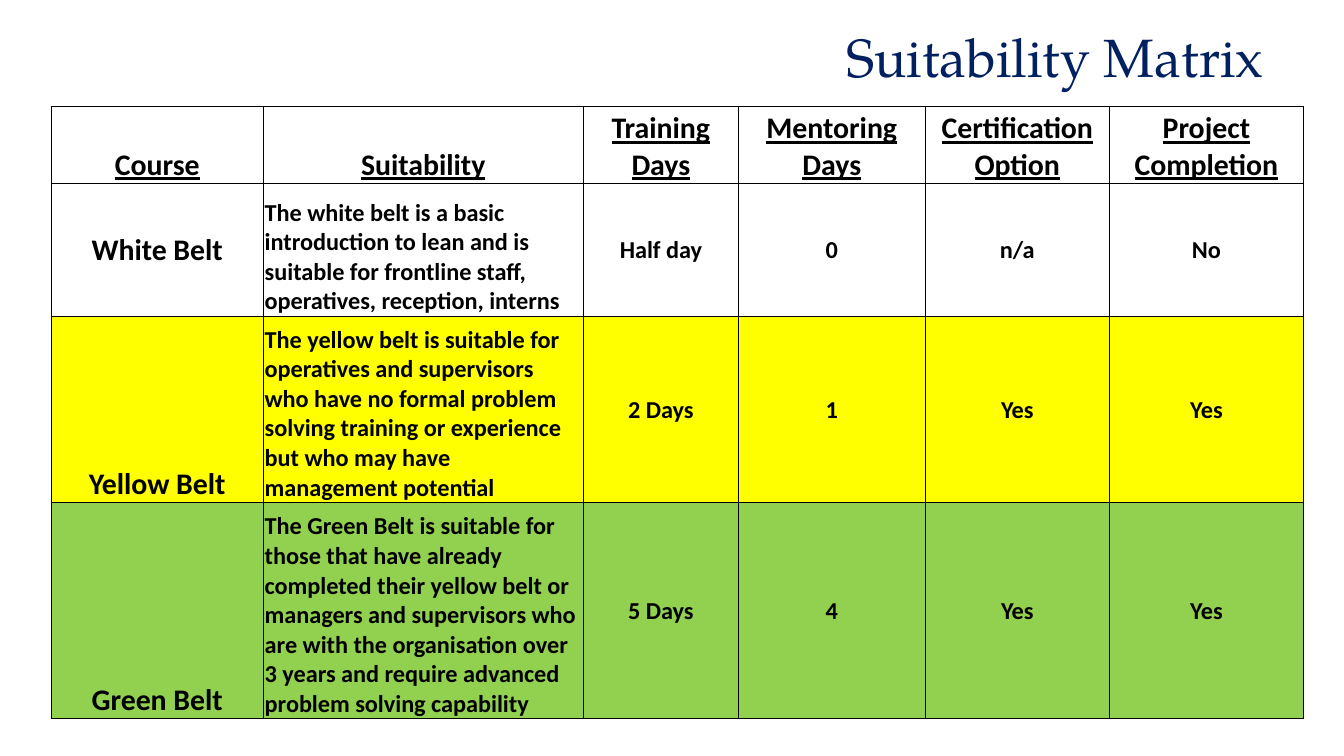
from dataclasses import dataclass

import pptx
import pptx.dml.color
import pptx.enum.text
import pptx.oxml
import pptx.oxml.ns
import pptx.table
import pptx.util

PX = 4572  # EMU, 200 px to the inch
BLACK = pptx.dml.color.RGBColor(0x00, 0x00, 0x00)
NAVY = pptx.dml.color.RGBColor(0x00, 0x20, 0x60)
YELLOW = pptx.dml.color.RGBColor(0xFF, 0xFF, 0x00)
GREEN = pptx.dml.color.RGBColor(0x92, 0xD0, 0x50)
ALIGN = pptx.enum.text.PP_ALIGN
ANCHOR = pptx.enum.text.MSO_ANCHOR

COLUMN_WIDTHS = (316, 476, 231, 278, 274, 289)
HEADINGS = ("Course", "Suitability", "Training Days", "Mentoring Days",
            "Certification Option", "Project Completion")
HEADER_HEIGHT = 115
HEADING_SIZE, BODY_SIZE = 16, 13
BORDER_WIDTH = pptx.util.Pt(0.5)
CELL_MARGIN = 2


@dataclass(frozen=True)
class Belt:
    name: str
    suitability: str
    facts: tuple[str, ...]
    height: int
    fill: pptx.dml.color.RGBColor | None = None
    name_anchor: ANCHOR = ANCHOR.BOTTOM


BELTS = (
    Belt("White Belt",
         "The white belt is a basic introduction to lean and is suitable for "
         "frontline staff, operatives, reception, interns",
         ("Half day", "0", "n/a", "No"), 198, name_anchor=ANCHOR.MIDDLE),
    Belt("Yellow Belt",
         "The yellow belt is suitable for operatives and supervisors who have no "
         "formal problem solving training or experience but who may have "
         "management potential",
         ("2 Days", "1", "Yes", "Yes"), 277, YELLOW),
    Belt("Green Belt",
         "The Green Belt is suitable for those that have already completed their "
         "yellow belt or managers and supervisors who are with the organisation "
         "over 3 years and require advanced problem solving capability",
         ("5 Days", "4", "Yes", "Yes"), 322, GREEN),
)


def set_all(target: object, **values: object) -> None:
    for name, value in values.items():
        setattr(target, name, value)


def write(para, text: str, align: ALIGN, size: float, face: str,
          color: pptx.dml.color.RGBColor, **style: object) -> None:
    para.alignment = align
    span = para.add_run()
    span.text = text
    set_all(span.font, size=pptx.util.Pt(size), name=face, **style)
    span.font.color.rgb = color


def add_borders(cell: pptx.table._Cell) -> None:
    properties = cell._tc.get_or_add_tcPr()
    for side in ("lnL", "lnR", "lnT", "lnB"):
        properties.append(pptx.oxml.parse_xml(
            f'<a:{side} {pptx.oxml.ns.nsdecls("a")} w="{BORDER_WIDTH}">'
            f'<a:solidFill><a:srgbClr val="{BLACK}"/></a:solidFill></a:{side}>'))


def fill_cell(cell: pptx.table._Cell, text: str, size: int, anchor: ANCHOR,
              align: ALIGN = ALIGN.CENTER, underline: bool = False,
              fill: pptx.dml.color.RGBColor | None = None) -> None:
    margin = CELL_MARGIN * PX
    set_all(cell, vertical_anchor=anchor, margin_left=margin, margin_right=margin,
            margin_top=margin, margin_bottom=0)
    add_borders(cell)
    if fill is None:
        cell.fill.background()
    else:
        cell.fill.solid()
        cell.fill.fore_color.rgb = fill
    write(cell.text_frame.paragraphs[0], text, align, size, "Calibri", BLACK,
          bold=True, underline=underline)


def add_title(page, text: str) -> None:
    box = page.shapes.add_textbox(100 * PX, 36 * PX, 1800 * PX, 188 * PX)
    set_all(box.text_frame, word_wrap=True, vertical_anchor=ANCHOR.TOP, margin_top=0)
    write(box.text_frame.paragraphs[0], text, ALIGN.RIGHT, 28.8,
          "TeX Gyre Pagella", NAVY)


def add_matrix(page) -> None:
    heights = (HEADER_HEIGHT, *(belt.height for belt in BELTS))
    table = page.shapes.add_table(
        len(heights), len(COLUMN_WIDTHS), 76 * PX, 158 * PX,
        sum(COLUMN_WIDTHS) * PX, sum(heights) * PX).table
    set_all(table, first_row=False, horz_banding=False)
    for column, width in zip(table.columns, COLUMN_WIDTHS):
        column.width = width * PX
    for row, height in zip(table.rows, heights):
        row.height = height * PX

    for column, heading in enumerate(HEADINGS):
        fill_cell(table.cell(0, column), heading, HEADING_SIZE, ANCHOR.BOTTOM,
                  underline=True)
    for row, belt in enumerate(BELTS, start=1):
        fill_cell(table.cell(row, 0), belt.name, HEADING_SIZE, belt.name_anchor,
                  fill=belt.fill)
        fill_cell(table.cell(row, 1), belt.suitability, BODY_SIZE, ANCHOR.BOTTOM,
                  ALIGN.LEFT, fill=belt.fill)
        for column, fact in enumerate(belt.facts, start=2):
            fill_cell(table.cell(row, column), fact, BODY_SIZE, ANCHOR.MIDDLE,
                      fill=belt.fill)


def main() -> None:
    deck = pptx.Presentation()
    set_all(deck, slide_width=2000 * PX, slide_height=1125 * PX)
    page = deck.slides.add_slide(deck.slide_layouts[6])
    add_title(page, "Suitability Matrix")
    add_matrix(page)
    deck.save("out.pptx")


if __name__ == "__main__":
    main()
